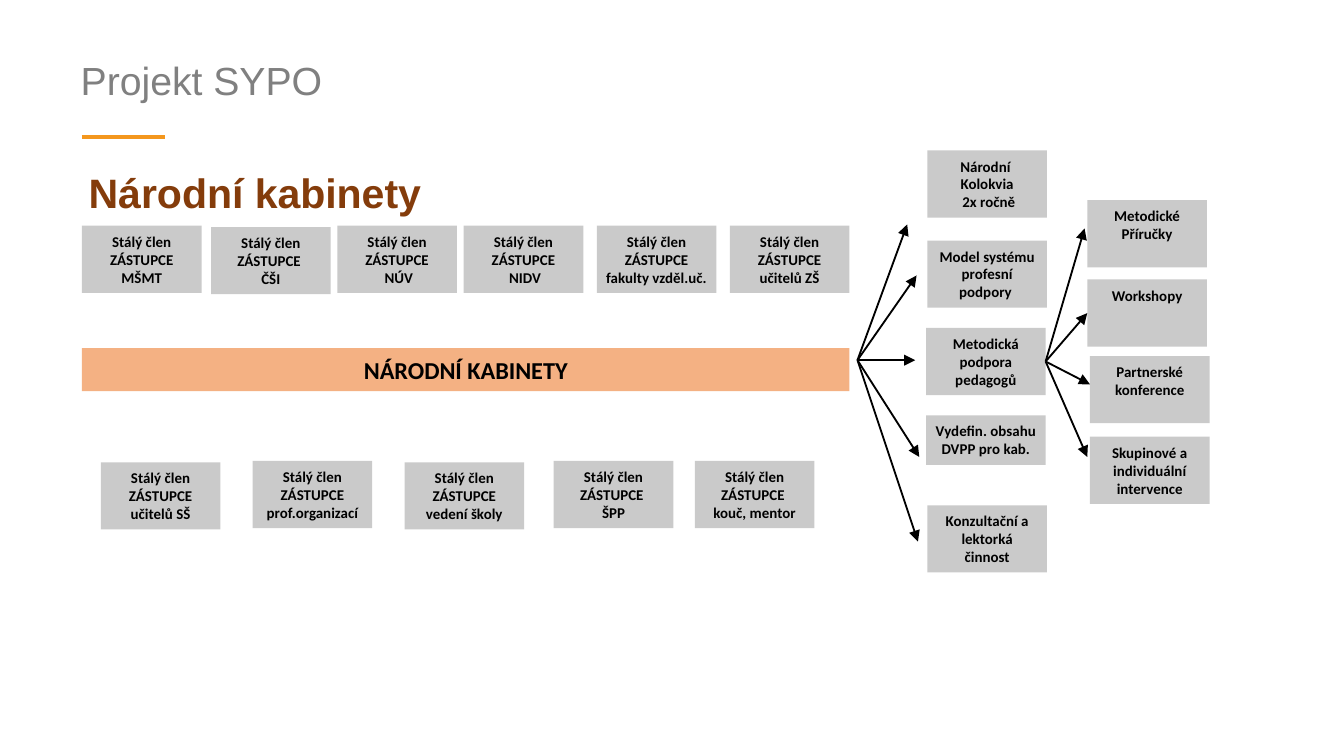
from dataclasses import dataclass
from lxml.etree import SubElement
from pptx import Presentation
from pptx.dml.color import RGBColor
from pptx.enum.shapes import MSO_CONNECTOR, MSO_SHAPE
from pptx.enum.text import MSO_ANCHOR, MSO_AUTO_SIZE, PP_ALIGN
from pptx.oxml.ns import qn
from pptx.util import Inches, Pt

SLIDE_WIDTH = Inches(10)
SLIDE_HEIGHT = SLIDE_WIDTH * 9 // 16
BOX_WIDTH, BOX_HEIGHT = 0.89, 0.5
GREY, PEACH, ORANGE, BROWN, BLACK = "CACACA", "F4B183", "F4971D", "843C0B", "000000"
LEFT_SIDE, RIGHT_SIDE = 1, 3


@dataclass
class Box:
    left: float
    top: float
    lines: tuple
    width: float = BOX_WIDTH
    height: float = BOX_HEIGHT
    fill: str = GREY
    size: float = 8


def member(left: float, top: float, *role: str) -> Box:
    return Box(left, top, ("Stálý člen", *role))


MEMBERS = [
    member(0.61, 1.68, "ZÁSTUPCE MŠMT"),
    member(1.57, 1.69, "ZÁSTUPCE ", "ČŠI"),
    member(2.51, 1.68, "ZÁSTUPCE", " NÚV"),
    member(3.45, 1.68, "ZÁSTUPCE", " NIDV"),
    member(4.44, 1.68, "ZÁSTUPCE fakulty vzděl.uč."),
    member(5.43, 1.68, "ZÁSTUPCE učitelů ZŠ"),
    member(0.75, 3.44, "ZÁSTUPCE učitelů SŠ"),
    member(1.88, 3.43, "ZÁSTUPCE prof.organizací"),
    member(3.01, 3.44, "ZÁSTUPCE vedení školy"),
    member(4.12, 3.43, "ZÁSTUPCE ", "ŠPP"),
    member(5.17, 3.43, "ZÁSTUPCE ", "kouč, mentor"),
]
CABINETS = Box(0.61, 2.59, ("NÁRODNÍ KABINETY",), 5.71, 0.32, PEACH, 13)
SUPPORT = Box(6.89, 2.44, ("Metodická podpora pedagogů",))
WORKSHOPS = Box(8.09, 2.08, ("Workshopy",))
OUTPUTS = [
    Box(6.9, 1.12, ("Národní ", "Kolokvia", " 2x ročně")),
    Box(6.9, 1.79, ("Model systému profesní podpory ",)),
    Box(6.89, 3.09, ("Vydefin. obsahu DVPP pro kab.",), height=0.37),
    Box(6.9, 3.76, ("Konzultační a lektorká", "činnost")),
    Box(8.09, 1.49, ("Metodické", "Příručky")),
    Box(8.11, 2.65, ("Partnerské", "konference")),
    Box(8.11, 3.25, ("Skupinové a individuální intervence",)),
]
CABINET_ORIGIN = (6.38, 2.68)
CABINET_TARGETS = [(6.75, 1.67), (6.82, 2.05), (6.81, 2.68), (6.84, 3.4), (6.83, 4.03)]
SUPPORT_ORIGIN = (7.78, 2.69)
WORKSHOPS_TARGET = (8.09, 2.34)
SUPPORT_TARGETS = [(8.07, 1.7), WORKSHOPS_TARGET, (8.11, 2.86), (8.09, 3.4)]


def color(value: str) -> RGBColor:
    return RGBColor.from_string(value)


def set_all(target, values: dict) -> None:
    for name, value in values.items():
        setattr(target, name, value)


def write(shape, lines: tuple, size: float, font: str, ink: str, bold: bool,
          align: PP_ALIGN, auto_size: MSO_AUTO_SIZE, spacing: float = 1.0) -> None:
    frame = shape.text_frame
    frame.text = "\n".join(lines)
    margins = {f"margin_{side}": Inches(0.05) for side in ("left", "top", "right", "bottom")}
    set_all(frame, {"word_wrap": True, "auto_size": auto_size,
                    "vertical_anchor": MSO_ANCHOR.TOP, **margins})
    for paragraph in frame.paragraphs:
        set_all(paragraph, {"alignment": align, "line_spacing": spacing, "space_before": Pt(0)})
        for run in paragraph.runs:
            set_all(run.font, {"size": Pt(size), "name": font, "bold": bold})
            run.font.color.rgb = color(ink)


def place(shape, left: float, top: float, width: float, height: float) -> None:
    set_all(shape, {"left": Inches(left), "top": Inches(top),
                    "width": Inches(width), "height": Inches(height)})


def draw_box(slide, box: Box):
    shape = slide.shapes.add_shape(
        MSO_SHAPE.RECTANGLE, Inches(box.left), Inches(box.top),
        Inches(box.width), Inches(box.height))
    shape.shadow.inherit = False
    shape.fill.solid()
    shape.fill.fore_color.rgb = color(box.fill)
    shape.line.fill.background()
    write(shape, box.lines, box.size, "Calibri", BLACK, True,
          PP_ALIGN.CENTER, MSO_AUTO_SIZE.SHAPE_TO_FIT_TEXT)
    return shape


def draw_line(slide, start: tuple, end: tuple, ink: str, width: float, arrow: bool = False):
    line = slide.shapes.add_connector(
        MSO_CONNECTOR.STRAIGHT, *(Inches(value) for value in (*start, *end)))
    line.line.color.rgb = color(ink)
    line.line.width = Pt(width)
    if arrow:
        SubElement(line.line._get_or_add_ln(), qn("a:tailEnd"), type="triangle")
    SubElement(line._element.spPr, qn("a:effectLst"))
    return line


def main() -> None:
    deck = Presentation()
    set_all(deck, {"slide_width": SLIDE_WIDTH, "slide_height": SLIDE_HEIGHT})
    slide = deck.slides.add_slide(deck.slide_layouts[1])

    # Title, accent line and heading
    title, heading = slide.placeholders
    place(title, 0.55, 0.34, 8.69, 0.66)
    write(title, ("Projekt SYPO",), 21, "Arial", "808080", False,
          PP_ALIGN.LEFT, MSO_AUTO_SIZE.NONE, 1.08)
    draw_line(slide, (0.61, 1.02), (1.23, 1.02), ORANGE, 2)
    place(heading, 0.61, 1.24, 7.5, 0.45)
    write(heading, ("Národní kabinety",), 22, "Arial", BROWN, True,
          PP_ALIGN.LEFT, MSO_AUTO_SIZE.NONE, 0.9)
    properties = heading.text_frame.paragraphs[0]._p.get_or_add_pPr()
    properties.set("marL", "0")
    properties.set("indent", "0")
    SubElement(properties, qn("a:buNone"))

    # Members, cabinets and their outputs
    for box in [*MEMBERS, CABINETS, *OUTPUTS]:
        draw_box(slide, box)
    support = draw_box(slide, SUPPORT)
    workshops = draw_box(slide, WORKSHOPS)

    # Arrows from the cabinets, then from methodical support
    for target in CABINET_TARGETS:
        draw_line(slide, CABINET_ORIGIN, target, BLACK, 1, arrow=True)
    for target in SUPPORT_TARGETS:
        arrow = draw_line(slide, SUPPORT_ORIGIN, target, BLACK, 1, arrow=True)
        arrow.begin_connect(support, RIGHT_SIDE)
        if target == WORKSHOPS_TARGET:
            arrow.end_connect(workshops, LEFT_SIDE)

    deck.save("out.pptx")


if __name__ == "__main__":
    main()
